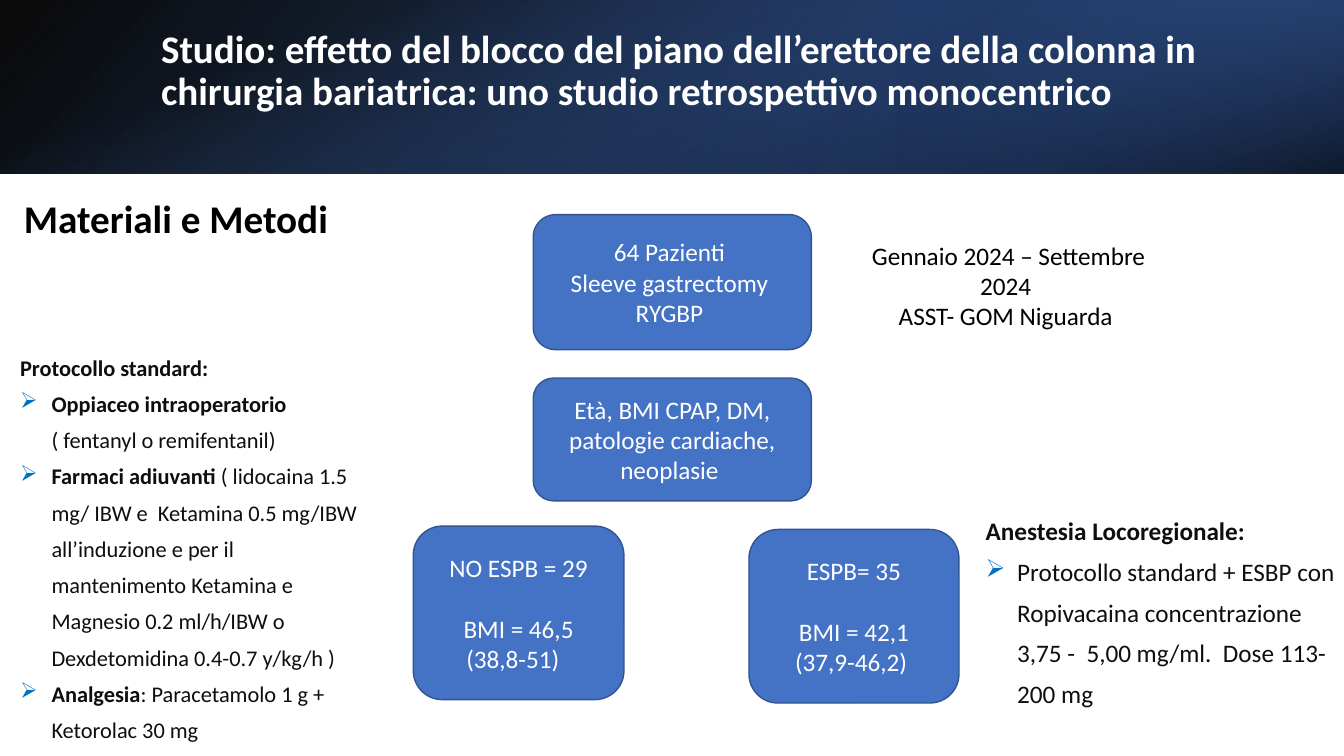
from lxml import etree
from pptx import Presentation
from pptx.dml.color import RGBColor
from pptx.enum import shapes, text
from pptx.oxml import ns
from pptx.util import Pt

WHITE, BLACK, INK = "FFFFFF", "000000", "0E0E0E"
BLUE, BORDER, ARROW = "4472C4", "325491", "0070C0"


def color(value):
    return RGBColor.from_string(value)


def child(parent, tag, **attributes):
    return etree.SubElement(parent, ns.qn(tag), attributes)


def style(font, size, value, bold=False):
    font.name, font.size, font.bold = "Calibri", Pt(size), bold
    font.color.rgb = color(value)


def add_band(slide, box, stops, angle, rotation=0, flipped=False):
    band = slide.shapes.add_shape(shapes.MSO_SHAPE.RECTANGLE, *map(Pt, box))
    band.shadow.inherit = False
    band.line.fill.background()
    band.rotation = rotation
    if flipped:
        band._element.spPr.xfrm.set("flipH", "1")
    gradient = etree.Element(ns.qn("a:gradFill"), rotWithShape="1")
    stop_list = child(gradient, "a:gsLst")
    for position, value, opacity in stops:
        stop = child(stop_list, "a:gs", pos=str(position * 1000))
        tint = child(stop, "a:srgbClr", val=value)
        child(tint, "a:alpha", val=str(opacity * 1000))
    child(gradient, "a:lin", ang=str(angle * 60000), scaled="0")
    band._element.spPr.find(ns.qn("a:prstGeom")).addnext(gradient)


def add_text_box(slide, box):
    frame = slide.shapes.add_textbox(*map(Pt, box)).text_frame
    frame.word_wrap = True
    return frame


def write_lines(frame, lines, size, value, bold=False, align=None, gap=0):
    for index, line in enumerate(lines):
        paragraph = frame.paragraphs[0] if index == 0 else frame.add_paragraph()
        paragraph.text = line
        paragraph.alignment = align
        if index and gap:
            paragraph.space_before = Pt(gap)
        style(paragraph.font, size, value, bold)


def add_step(slide, box, lines, gap=0):
    step = slide.shapes.add_shape(shapes.MSO_SHAPE.ROUNDED_RECTANGLE, *map(Pt, box))
    step.shadow.inherit = False
    step.fill.solid()
    step.fill.fore_color.rgb = color(BLUE)
    step.line.color.rgb = color(BORDER)
    step.line.width = Pt(1)
    step.text_frame.word_wrap = True
    step.text_frame.vertical_anchor = text.MSO_ANCHOR.MIDDLE
    write_lines(step.text_frame, lines, 18, WHITE, align=text.PP_ALIGN.CENTER, gap=gap)


def add_protocol(slide, box, heading, items, size):
    frame = add_text_box(slide, box)
    write_lines(frame, [heading], size, INK, bold=True)
    frame.paragraphs[0].line_spacing = 1.35
    for item in items:
        paragraph = frame.add_paragraph()
        paragraph.line_spacing = 1.35
        properties = paragraph._p.get_or_add_pPr()
        properties.set("marL", str(Pt(22.5)))
        properties.set("indent", str(Pt(-22.5)))
        child(child(properties, "a:buClr"), "a:srgbClr", val=ARROW)
        child(properties, "a:buChar", char="➢")
        for words, bold in item:
            run = paragraph.add_run()
            run.text = words
            style(run.font, size, INK, bold)


def add_title(slide, box, words):
    frame = add_text_box(slide, box)
    frame.vertical_anchor = text.MSO_ANCHOR.MIDDLE
    paragraph = frame.paragraphs[0]
    paragraph.line_spacing = 0.9
    run = paragraph.add_run()
    run.text = words
    style(run.font, 27.9, WHITE, True)
    paragraph.add_line_break()


def main():
    deck = Presentation()
    deck.slide_width, deck.slide_height = Pt(960), Pt(540)
    slide = deck.slides.add_slide(deck.slide_layouts[6])

    add_band(slide, (0, 0, 960, 124), [(0, BLACK, 96), (100, "2F5597", 100)],
             140, flipped=True)
    add_band(slide, (640, 0, 320, 124), [(19, "203864", 68), (100, BLUE, 79)],
             320, rotation=180, flipped=True)
    add_band(slide, (418, -418, 124, 960), [(23, BLUE, 0), (99, BLACK, 74)],
             340, rotation=90)

    add_title(slide, (108, 27.4, 790.5, 69),
              "Studio: effetto del blocco del piano dell’erettore della colonna in "
              "chirurgia bariatrica: uno studio retrospettivo monocentrico")
    write_lines(add_text_box(slide, (10, 135.5, 257, 41)),
                ["Materiali e Metodi"], 28, BLACK, bold=True)

    add_step(slide, (380.9, 153.3, 198.7, 96.5),
             ["64 Pazienti ", "Sleeve gastrectomy ", "RYGBP "])
    add_step(slide, (380.9, 270, 198.7, 87.8),
             ["Età, BMI CPAP, DM, patologie cardiache, neoplasie "])
    add_step(slide, (295.2, 375.8, 150.5, 124),
             ["NO ESPB = 29", "BMI = 46,5 (38,8-51)  "], gap=22)
    add_step(slide, (535, 378.2, 150, 124),
             ["ESPB= 35", "BMI = 42,1 (37,9-46,2) "], gap=22)

    write_lines(add_text_box(slide, (610.6, 167.8, 219.6, 72.7)),
                ["Gennaio 2024 – Settembre 2024 ", "ASST- GOM Niguarda "],
                18, BLACK, align=text.PP_ALIGN.CENTER)

    add_protocol(slide, (7.2, 242.6, 265.7, 266.4), "Protocollo standard:", [
        [("Oppiaceo intraoperatorio ", True), ("( fentanyl o remifentanil)", False)],
        [("Farmaci adiuvanti ", True),
         ("( lidocaina 1.5 mg/ IBW e  Ketamina 0.5 mg/IBW all’induzione e per il "
          "mantenimento Ketamina e Magnesio 0.2 ml/h/IBW o  "
          "Dexdetomidina 0.4-0.7 y/kg/h )", False)],
        [("Analgesia", True), (": Paracetamolo 1 g + Ketorolac 30 mg", False)],
    ], 16)
    add_protocol(slide, (697, 357, 266.4, 152), "Anestesia Locoregionale:", [
        [("Protocollo standard + ESBP con Ropivacaina concentrazione "
          "3,75 -  5,00 mg/ml.  Dose 113-200 mg", False)],
    ], 18)

    deck.save("out.pptx")


if __name__ == "__main__":
    main()
